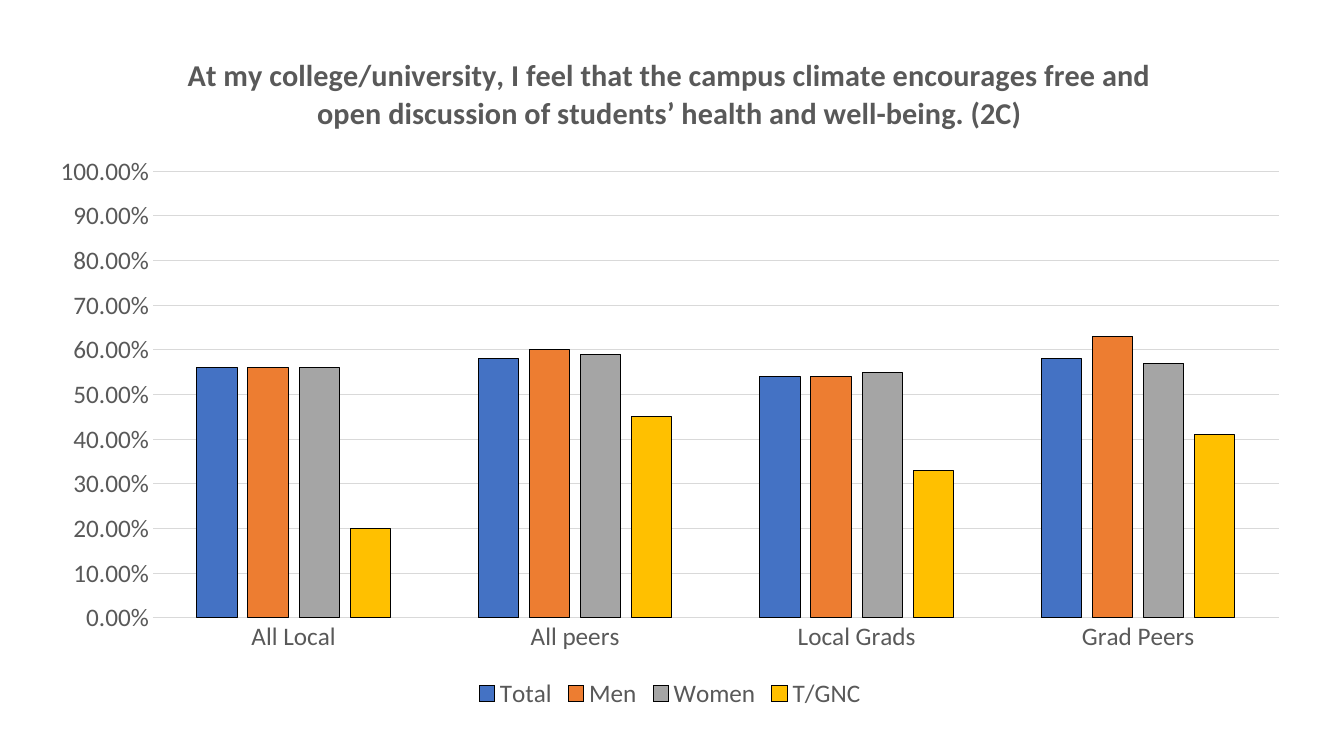
from dataclasses import dataclass

from pptx import Presentation
from pptx.chart.data import CategoryChartData as ChartData
from pptx.dml.color import RGBColor as Color
from pptx.enum.chart import XL_CHART_TYPE as ChartType
from pptx.enum.chart import XL_LEGEND_POSITION as LegendPosition
from pptx.enum.chart import XL_TICK_MARK as TickMark
from pptx.util import Cm, Pt


@dataclass(frozen=True)
class Theme:
    font: str = "Calibri"
    title_size: float = 21.6
    text_size: float = 18
    line_width: float = 0.75
    text: str = "595959"
    grid: str = "D9D9D9"
    outline: str = "000000"
    series: tuple = ("4472C4", "ED7D31", "A5A5A5", "FFC000")


def set_values(target, values):
    for name, value in values.items():
        setattr(target, name, value)


class SlideBuilder:
    def __init__(self, slide, theme):
        self.slide = slide
        self.theme = theme

    def style_font(self, font, size, bold=False):
        set_values(font, {"name": self.theme.font, "size": Pt(size), "bold": bold})
        font.color.rgb = Color.from_string(self.theme.text)

    def style_line(self, line, color):
        line.color.rgb = Color.from_string(color)
        line.width = Pt(self.theme.line_width)

    def add_column_chart(self, box, categories, series):
        data = ChartData(number_format="0%")
        data.categories = categories
        for name, values in series.items():
            data.add_series(name, values)
        frame = self.slide.shapes.add_chart(
            ChartType.COLUMN_CLUSTERED, *map(Cm, box), data
        )
        chart = frame.chart
        self.style_font(chart.font, self.theme.text_size)
        plot = chart.plots[0]
        set_values(plot, {"gap_width": 219, "overlap": -27, "vary_by_categories": False})
        for item, color in zip(plot.series, self.theme.series):
            item.format.fill.solid()
            item.format.fill.fore_color.rgb = Color.from_string(color)
            self.style_line(item.format.line, self.theme.outline)
        return chart

    def style_axes(self, chart):
        category_axis, value_axis = chart.category_axis, chart.value_axis
        for axis in (category_axis, value_axis):
            set_values(axis, {
                "major_tick_mark": TickMark.NONE,
                "minor_tick_mark": TickMark.NONE,
            })
            self.style_font(axis.tick_labels.font, self.theme.text_size)
        self.style_line(category_axis.format.line, self.theme.grid)
        set_values(value_axis, {
            "minimum_scale": 0,
            "maximum_scale": 1,
            "major_unit": 0.1,
            "has_major_gridlines": True,
        })
        value_axis.format.line.fill.background()
        self.style_line(value_axis.major_gridlines.format.line, self.theme.grid)
        set_values(value_axis.tick_labels, {
            "number_format": "0.00%",
            "number_format_is_linked": False,
        })

    def add_title(self, chart, text):
        chart.has_title = True
        paragraph = chart.chart_title.text_frame.paragraphs[0]
        run = paragraph.add_run()
        run.text = text
        self.style_font(run.font, self.theme.title_size, bold=True)

    def add_legend(self, chart):
        chart.has_legend = True
        set_values(chart.legend, {
            "position": LegendPosition.BOTTOM,
            "include_in_layout": False,
        })
        self.style_font(chart.legend.font, self.theme.text_size)


def main():
    presentation = Presentation()
    set_values(presentation, {"slide_width": Cm(33.87), "slide_height": Cm(19.05)})
    slide = presentation.slides.add_slide(presentation.slide_layouts[6])
    builder = SlideBuilder(slide, Theme())
    chart = builder.add_column_chart(
        (0.89, 0.74, 31.98, 17.25),
        ["All Local", "All peers", "Local Grads", "Grad Peers"],
        {
            "Total": (0.56, 0.58, 0.54, 0.58),
            "Men": (0.56, 0.60, 0.54, 0.63),
            "Women": (0.56, 0.59, 0.55, 0.57),
            "T/GNC": (0.20, 0.45, 0.33, 0.41),
        },
    )
    builder.style_axes(chart)
    builder.add_title(
        chart,
        "At my college/university, I feel that the campus climate encourages free and "
        "open discussion of students’ health and well-being. (2C)",
    )
    builder.add_legend(chart)
    presentation.save("out.pptx")


if __name__ == "__main__":
    main()
